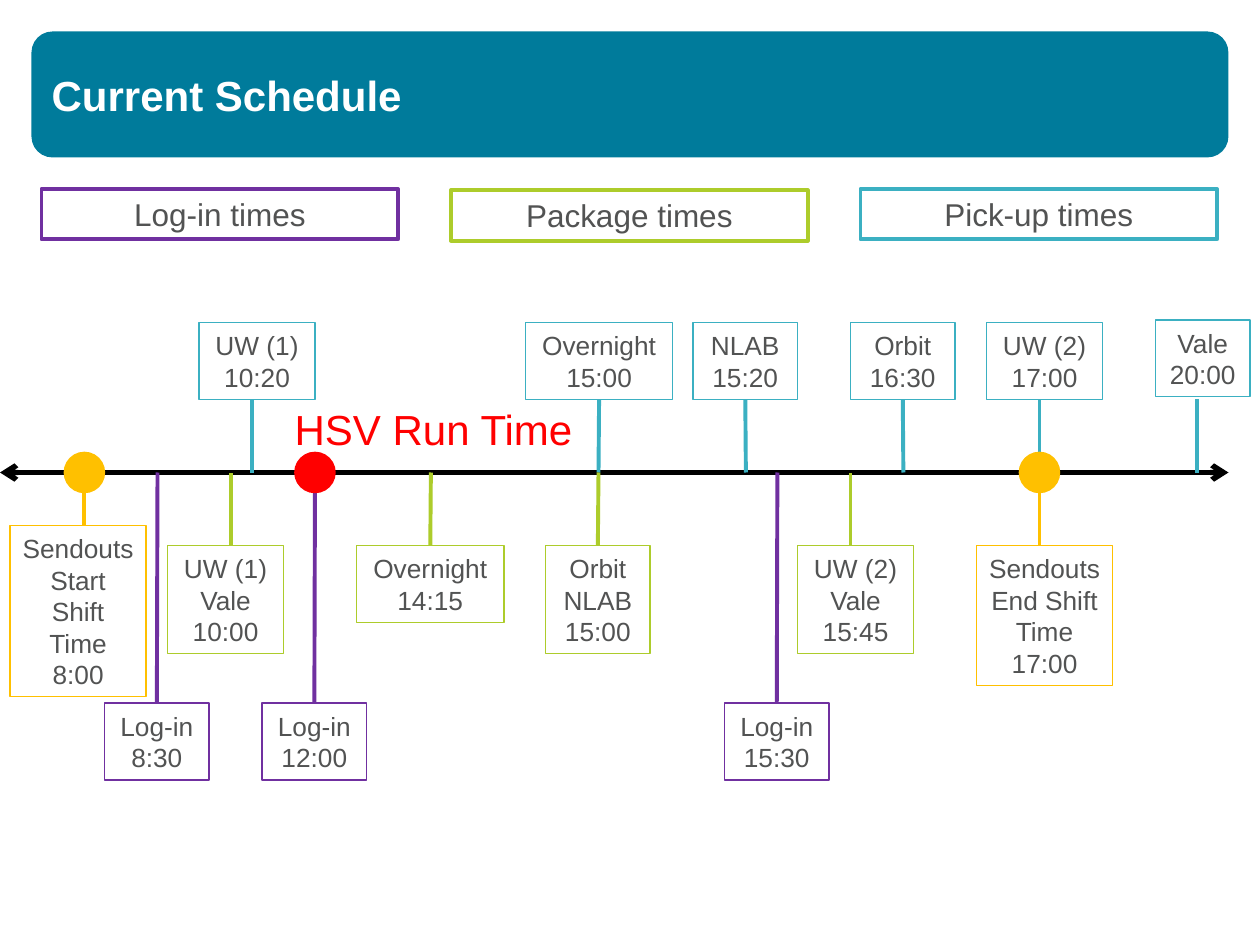
import lxml.etree
import pptx
import pptx.util
import pptx.dml.color
import pptx.enum.shapes
import pptx.enum.text
import pptx.oxml.ns

Inches = pptx.util.Inches
Pt = pptx.util.Pt
SHAPE = pptx.enum.shapes.MSO_SHAPE
ALIGN = pptx.enum.text.PP_ALIGN
ANCHOR = pptx.enum.text.MSO_ANCHOR
qn = pptx.oxml.ns.qn

COLORS = {
    "banner": "007B9B", "white": "FFFFFF", "text": "525353", "axis": "000000",
    "login": "7030A0", "package": "ADCC2B", "pickup": "3BB0C2",
    "shift": "FFC000", "run": "FF0000",
}
AXIS_Y = 3.75
DOT = 0.33

# (label, colour, left, top)
LEGEND = [
    ("Log-in times", "login", 0.33, 1.5),
    ("Package times", "package", 3.58, 1.51),
    ("Pick-up times", "pickup", 6.83, 1.5),
]
# (text, colour, left, top, width, height, stem x)
EVENTS = [
    ("UW (1)\n10:20", "pickup", 1.58, 2.56, 0.92, 0.61, 2),
    ("Overnight\n15:00", "pickup", 4.17, 2.56, 1.17, 0.61, 4.75),
    ("NLAB\n15:20", "pickup", 5.5, 2.56, 0.83, 0.61, 5.92),
    ("Orbit\n16:30", "pickup", 6.75, 2.56, 0.83, 0.61, 7.17),
    ("UW (2)\n17:00", "pickup", 7.83, 2.56, 0.92, 0.61, 8.25),
    ("Vale\n20:00", "pickup", 9.17, 2.54, 0.75, 0.61, 9.5),
    ("UW (1)\nVale\n10:00", "package", 1.33, 4.33, 0.92, 0.86, 1.83),
    ("Overnight\n14:15", "package", 2.83, 4.33, 1.17, 0.61, 3.42),
    ("Orbit\nNLAB\n15:00", "package", 4.33, 4.33, 0.83, 0.86, 4.75),
    ("UW (2)\nVale\n15:45", "package", 6.33, 4.33, 0.92, 0.86, 6.75),
    ("Log-in\n8:30", "login", 0.83, 5.58, 0.83, 0.61, 1.25),
    ("Log-in\n12:00", "login", 2.08, 5.58, 0.83, 0.61, 2.5),
    ("Log-in\n15:30", "login", 5.75, 5.58, 0.83, 0.61, 6.17),
    ("Sendouts Start Shift Time\n8:00", "shift", 0.08, 4.17, 1.08, 1.36, 0.67),
    ("Sendouts End Shift Time\n17:00", "shift", 7.75, 4.33, 1.08, 1.11, 8.25),
]
# (colour, centre x)
DOTS = [("shift", 0.67), ("shift", 8.25), ("run", 2.5)]


def rgb(name):
    return pptx.dml.color.RGBColor.from_string(COLORS[name])


def style_text(tf, size, color, align, bold=False):
    for p in tf.paragraphs:
        p.alignment = align
        for r in p.runs:
            r.font.name = "Arial"
            r.font.size = Pt(size)
            r.font.bold = bold
            r.font.color.rgb = rgb(color)


def add_filled(slide, kind, color, x, y, w, h):
    sp = slide.shapes.add_shape(kind, Inches(x), Inches(y), Inches(w), Inches(h))
    sp.shadow.inherit = False
    sp.fill.solid()
    sp.fill.fore_color.rgb = rgb(color)
    sp.line.fill.background()
    return sp


def add_box(slide, text, color, x, y, w, h, size=15, line=0.75):
    """Add an outlined rectangle with centred text."""
    sp = slide.shapes.add_shape(
        SHAPE.RECTANGLE, Inches(x), Inches(y), Inches(w), Inches(h))
    sp.shadow.inherit = False
    sp.fill.background()
    sp.line.color.rgb = rgb(color)
    sp.line.width = Pt(line)
    tf = sp.text_frame
    tf.text = text
    tf.word_wrap = True
    style_text(tf, size, "text", ALIGN.CENTER)
    return sp


def add_line(slide, color, width, x1, y1, x2, y2):
    line = slide.shapes.add_connector(
        pptx.enum.shapes.MSO_CONNECTOR.STRAIGHT,
        Inches(x1), Inches(y1), Inches(x2), Inches(y2))
    line.line.color.rgb = rgb(color)
    line.line.width = Pt(width)
    lxml.etree.SubElement(line._element.spPr, qn("a:effectLst"))
    return line


def add_axis(slide):
    axis = add_line(slide, "axis", 3, 0, AXIS_Y, 9.75, AXIS_Y)
    ln = axis._element.spPr.find(qn("a:ln"))
    for tag in ("a:headEnd", "a:tailEnd"):
        lxml.etree.SubElement(ln, qn(tag), type="arrow")


def add_event(slide, text, color, x, y, w, h, stem_x):
    """Add an event box and the stem that ties it to the axis."""
    above = y < AXIS_Y
    edge = 3.17 if above else y
    stem = add_line(slide, color, 2.25, stem_x, edge, stem_x, AXIS_Y)
    box = add_box(slide, text, color, x, y, w, h)
    if abs(x + w / 2 - stem_x) < 0.02:
        stem.begin_connect(box, 2 if above else 0)


def add_title(slide, text):
    banner = add_filled(slide, SHAPE.ROUNDED_RECTANGLE, "banner", 0.25, 0.25, 9.5, 1)
    slide.shapes._spTree.insert(2, banner._element)
    title = slide.shapes.title
    title.left, title.top = Inches(0.31), Inches(0.5)
    title.width, title.height = Inches(9.25), Inches(1.33)
    tf = title.text_frame
    tf.text = text
    tf.vertical_anchor = ANCHOR.TOP
    style_text(tf, 24, "white", ALIGN.LEFT, bold=True)


def add_run_label(slide, text):
    sp = slide.shapes.add_textbox(Inches(2.24), Inches(3.15), Inches(2.43), Inches(0.5))
    tf = sp.text_frame
    tf.text = text
    tf.word_wrap = False
    style_text(tf, 24, "run", ALIGN.LEFT)


def main():
    prs = pptx.Presentation()
    prs.slide_width, prs.slide_height = Inches(10), Inches(7.5)
    slide = prs.slides.add_slide(prs.slide_layouts[5])
    add_title(slide, "Current Schedule")
    for label, color, x, y in LEGEND:
        add_box(slide, label, color, x, y, 2.83, 0.4, size=18, line=2.25)
    add_axis(slide)
    for event in EVENTS:
        add_event(slide, *event)
    for color, x in DOTS:
        add_filled(slide, SHAPE.OVAL, color, x - DOT / 2, AXIS_Y - DOT / 2, DOT, DOT)
    add_run_label(slide, "HSV Run Time")
    prs.save("out.pptx")


if __name__ == "__main__":
    main()
